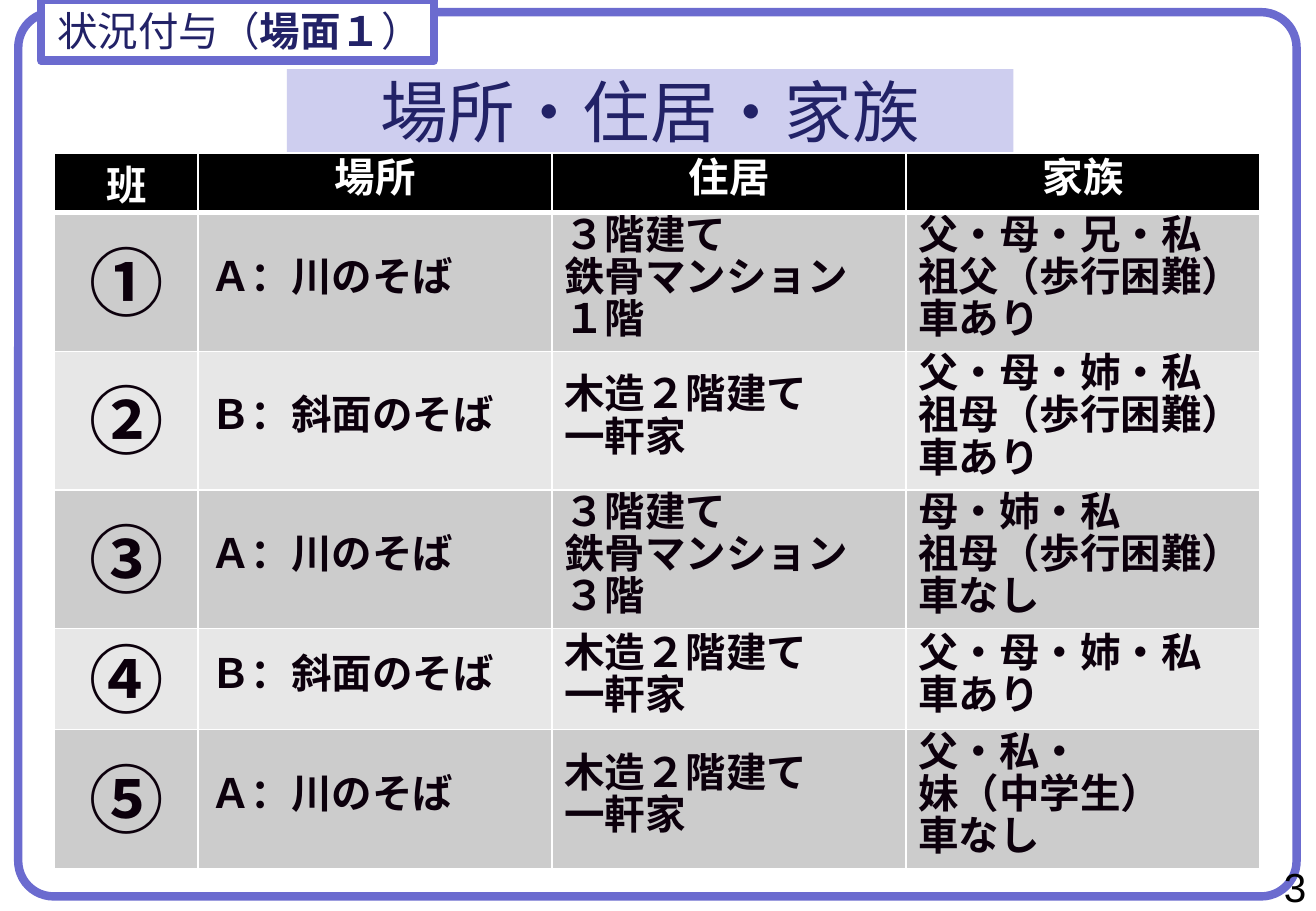
from lxml import etree
from pptx import Presentation
from pptx import util as u
from pptx.dml.color import RGBColor
from pptx.enum import shapes, text
from pptx.oxml import ns

SLIDE_W, SLIDE_H = 10.83, 7.5
JP, LATIN = "Noto Sans CJK JP", "Arial"
WHITE = RGBColor(0xFF, 0xFF, 0xFF)
BLACK = RGBColor(0, 0, 0)
NAVY = RGBColor(0x22, 0x22, 0x67)
VIOLET = RGBColor(0x6B, 0x6B, 0xCF)
LILAC = RGBColor(0xCE, 0xCE, 0xEF)
INK = RGBColor(0x0C, 0x00, 0x0C)
BANDS = [RGBColor(0xCC, 0xCC, 0xCC), RGBColor(0xE7, 0xE7, 0xE7)]
CENTER, LEFT, RIGHT = text.PP_ALIGN.CENTER, text.PP_ALIGN.LEFT, text.PP_ALIGN.RIGHT

COLUMNS = [1.18, 2.91, 2.91, 2.91]
ROWS = [0.49, 1.14, 1.14, 1.14, 0.83, 1.14]
HEADINGS = ["班", "場所", "住居", "家族"]
RIVER, SLOPE = "Ａ：川のそば", "Ｂ：斜面のそば"
HOUSE = "木造２階建て\n一軒家"
GROUPS = [
    ["①", RIVER, "３階建て\n鉄骨マンション\n１階", "父・母・兄・私\n祖父（歩行困難）\n車あり"],
    ["②", SLOPE, HOUSE, "父・母・姉・私\n祖母（歩行困難）\n車あり"],
    ["③", RIVER, "３階建て\n鉄骨マンション\n３階", "母・姉・私\n祖母（歩行困難）\n車なし"],
    ["④", SLOPE, HOUSE, "父・母・姉・私\n車あり"],
    ["⑤", RIVER, HOUSE, "父・私・\n妹（中学生）\n車なし"],
]


def apply(target, values):
    for name, value in values.items():
        setattr(target, name, value)


def write(paragraph, runs, size, color, align, spacing=None, font=JP):
    apply(paragraph, {"alignment": align, "line_spacing": spacing and u.Pt(spacing)})
    for words, bold in runs:
        run = paragraph.add_run()
        run.text = words
        apply(run.font, {"size": u.Pt(size), "bold": bold, "name": font})
        run.font.color.rgb = color
        east_asian = etree.SubElement(run.font._element, ns.qn("a:ea"))
        east_asian.set("typeface", font)


def add_panel(slide, box, kind, fill=None, line=None):
    panel = slide.shapes.add_shape(kind, *map(u.Inches, box))
    panel.shadow.inherit = False
    if fill is None:
        panel.fill.background()
    else:
        panel.fill.solid()
        panel.fill.fore_color.rgb = fill
    if line is None:
        panel.line.fill.background()
    else:
        panel.line.color.rgb = line
        panel.line.width = u.Pt(5)
    return panel


def add_title(slide, box):
    title = add_panel(slide, box, shapes.MSO_SHAPE.RECTANGLE, LILAC)
    write(title.text_frame.paragraphs[0], [("場所・住居・家族", False)], 40, NAVY, CENTER, 44)


def add_frame(slide, box):
    frame = add_panel(slide, box, shapes.MSO_SHAPE.ROUNDED_RECTANGLE, line=VIOLET)
    frame.adjustments[0] = 0.04


def add_scene_tag(slide, box):
    tag = add_panel(slide, box, shapes.MSO_SHAPE.RECTANGLE, WHITE, VIOLET)
    tag.text_frame.word_wrap = False
    runs = [("状況付与（", False), ("場面１", True), ("）", False)]
    write(tag.text_frame.paragraphs[0], runs, 24, NAVY, RIGHT)


def add_borders(cell, widths):
    properties = cell._tc.get_or_add_tcPr()
    for place, (side, width) in enumerate(widths.items()):
        border = etree.Element(ns.qn("a:ln" + side), w=str(u.Pt(width)))
        solid = etree.SubElement(border, ns.qn("a:solidFill"))
        etree.SubElement(solid, ns.qn("a:srgbClr"), val=str(WHITE))
        properties.insert(place, border)


def fill_cell(cell, words, row, column):
    heading, number = row == 0, column == 0
    cell.fill.solid()
    cell.fill.fore_color.rgb = BLACK if heading else BANDS[(row - 1) % 2]
    margin = 0 if number else u.Inches(0.05)
    apply(cell, {"vertical_anchor": text.MSO_ANCHOR.MIDDLE,
                 "margin_top": margin, "margin_bottom": margin})
    size = 44 if number and not heading else 24
    spacing = (35 if heading else 59) if number else 25
    align = CENTER if heading or number else LEFT
    for index, line in enumerate(words.split("\n")):
        frame = cell.text_frame
        paragraph = frame.add_paragraph() if index else frame.paragraphs[0]
        write(paragraph, [(line, True)], size, WHITE if heading else INK, align, spacing)
    add_borders(cell, {"L": 1, "R": 1, "T": 3 if row == 1 else 1, "B": 3 if heading else 1})


def add_group_table(slide, box):
    left, top, width, height = box
    groups = slide.shapes.add_table(len(ROWS), len(COLUMNS), *map(u.Inches, box)).table
    for column, share in zip(groups.columns, COLUMNS):
        column.width = u.Inches(width * share / sum(COLUMNS))
    for row, share in zip(groups.rows, ROWS):
        row.height = u.Inches(height * share / sum(ROWS))
    for row, entries in enumerate([HEADINGS] + GROUPS):
        for column, words in enumerate(entries):
            fill_cell(groups.cell(row, column), words, row, column)


def add_page_number(slide, box):
    page = slide.shapes.add_textbox(*map(u.Inches, box)).text_frame
    apply(page, {"word_wrap": True, "margin_top": 0, "margin_bottom": 0})
    write(page.paragraphs[0], [("3", False)], 24, BLACK, RIGHT, 24, LATIN)


def build_scene_slide(deck):
    slide = deck.slides.add_slide(deck.slide_layouts[6])
    add_title(slide, (2.36, 0.57, 5.98, 0.73))
    add_frame(slide, (0.15, 0.1, SLIDE_W - 0.31, SLIDE_H - 0.22))
    add_group_table(slide, (0.45, 1.26, 9.92, sum(ROWS)))
    add_page_number(slide, (SLIDE_W - 0.59, SLIDE_H - 0.34, 0.61, 0.34))
    add_scene_tag(slide, (0.34, 0, 3.23, 0.5))


def main():
    deck = Presentation()
    apply(deck, {"slide_width": u.Inches(SLIDE_W), "slide_height": u.Inches(SLIDE_H)})
    build_scene_slide(deck)
    deck.save("out.pptx")


if __name__ == "__main__":
    main()
